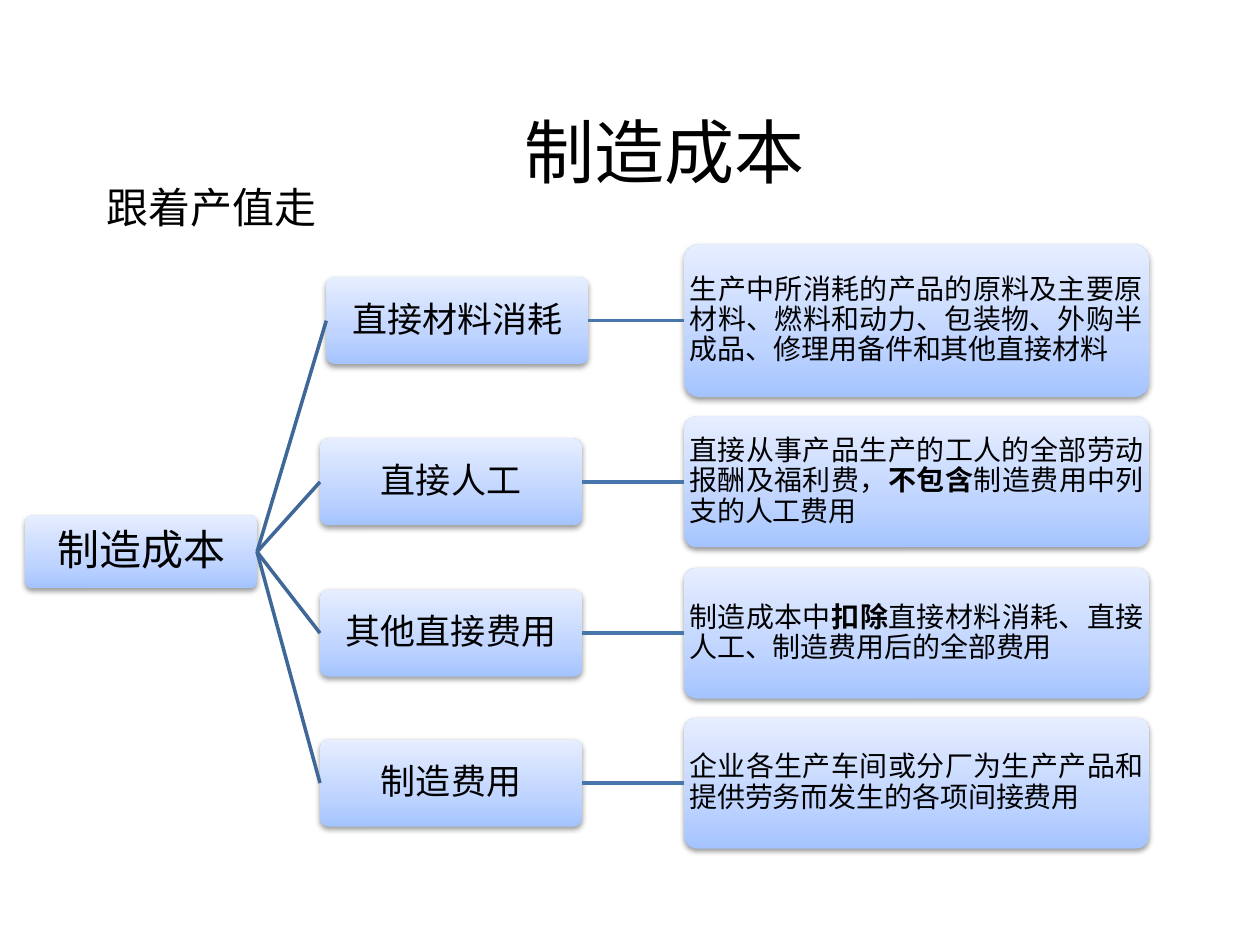
from lxml.etree import SubElement
from pptx import Presentation
from pptx.dml.color import RGBColor
from pptx.enum.shapes import MSO_CONNECTOR, MSO_SHAPE
from pptx.enum.text import MSO_ANCHOR, PP_ALIGN
from pptx.oxml import parse_xml
from pptx.oxml.ns import nsdecls, qn
from pptx.util import Inches, Pt

STOPS = ((0, "A4C4FF"), (35, "BFD4FF"), (100, "E6EEFF"))
ROWS = (
    (2.59, 2.2, 1.21, "直接材料消耗",
     "生产中所消耗的产品的原料及主要原材料、燃料和动力、包装物、外购半成品、修理用备件和其他直接材料"),
    (2.54, 3.48, 1.04, "直接人工",
     "直接从事产品生产的工人的全部劳动报酬及福利费，*不包含*制造费用中列支的人工费用"),
    (2.54, 4.68, 1.04, "其他直接费用",
     "制造成本中*扣除*直接材料消耗、直接人工、制造费用后的全部费用"),
    (2.54, 5.87, 1.04, "制造费用",
     "企业各生产车间或分厂为生产产品和提供劳务而发生的各项间接费用"),
)


def tint(code):
    """Turn a hex string into a colour."""
    return RGBColor.from_string(code)


class Deck:
    """Holds the style and the current slide."""

    font = "Noto Sans CJK SC"
    ink = "000000"

    def __init__(self, slide):
        """Keep the slide to draw on."""
        self.slide = slide

    def words(self, frame, text, size, align, anchor=MSO_ANCHOR.MIDDLE):
        """Fill a frame with one paragraph, with starred parts in bold."""
        frame.word_wrap = True
        frame.vertical_anchor = anchor
        para = frame.paragraphs[0]
        para.alignment = align
        para.font.size = Pt(size)
        para.font.color.rgb = tint(self.ink)
        para.font.name = self.font
        props = para._p.pPr.find(qn("a:defRPr"))
        SubElement(props, qn("a:ea")).set("typeface", self.font)
        for num, part in enumerate(text.split("*")):
            run = para.add_run()
            run.text = part
            if num % 2:
                run.font.bold = True
        return para

    def label(self, left, top, width, height, text, size, align, anchor):
        """Add plain text."""
        box = self.slide.shapes.add_textbox(
            Inches(left), Inches(top), Inches(width), Inches(height))
        self.words(box.text_frame, text, size, align, anchor)

    def card(self, left, top, width, height, text, size,
             align=PP_ALIGN.CENTER, inset=0.01):
        """Add a rounded box with a gradient, a soft shadow and text."""
        box = self.slide.shapes.add_shape(
            MSO_SHAPE.ROUNDED_RECTANGLE,
            Inches(left), Inches(top), Inches(width), Inches(height))
        box.adjustments[0] = 0.1
        box.line.fill.background()
        box.shadow.inherit = False
        props = box._element.spPr
        stops = "".join(
            f'<a:gs pos="{pos * 1000}"><a:srgbClr val="{code}"/></a:gs>'
            for pos, code in STOPS)
        props.find(qn("a:prstGeom")).addnext(parse_xml(
            f'<a:gradFill {nsdecls("a")} rotWithShape="1"><a:gsLst>{stops}'
            '</a:gsLst><a:lin ang="16200000" scaled="0"/></a:gradFill>'))
        props.find(qn("a:effectLst")).append(parse_xml(
            f'<a:outerShdw {nsdecls("a")} blurRad="40000" dist="20000" '
            'dir="5400000" rotWithShape="0"><a:srgbClr val="000000">'
            '<a:alpha val="38000"/></a:srgbClr></a:outerShdw>'))
        frame = box.text_frame
        frame.margin_left = frame.margin_right = Inches(inset)
        frame.margin_top = frame.margin_bottom = Inches(inset)
        self.words(frame, text, size, align).line_spacing = 0.9
        return box

    def link(self, start, end, code):
        """Join the right side of one box to the left side of another."""
        line = self.slide.shapes.add_connector(MSO_CONNECTOR.STRAIGHT, 0, 0, 0, 0)
        line.begin_connect(start, 3)
        line.end_connect(end, 1)
        line.line.color.rgb = tint(code)
        line.line.width = Pt(2)
        SubElement(line._element.spPr, qn("a:effectLst"))


def main():
    """Build the cost tree slide."""
    show = Presentation()
    show.slide_width, show.slide_height = Inches(10), Inches(7.5)
    deck = Deck(show.slides.add_slide(show.slide_layouts[6]))
    root = deck.card(0.2, 4.09, 1.84, 0.58, "制造成本", 24, inset=0.02)
    tall = 0.69
    for left, top, height, name, note in ROWS:
        item = deck.card(left, top, 2.08, tall, name, 20)
        detail = deck.card(5.43, top + (tall - height) / 2, 3.69, height,
                           note, 16, PP_ALIGN.JUSTIFY)
        deck.link(root, item, "3F6797")
        deck.link(item, detail, "4875AC")
    deck.label(2.4, 0.92, 5.75, 0.55, "制造成本", 40,
               PP_ALIGN.CENTER, MSO_ANCHOR.MIDDLE)
    deck.label(0.75, 1.39, 2.52, 0.5, "跟着产值走", 24,
               PP_ALIGN.LEFT, MSO_ANCHOR.TOP)
    show.save("out.pptx")


if __name__ == "__main__":
    main()
